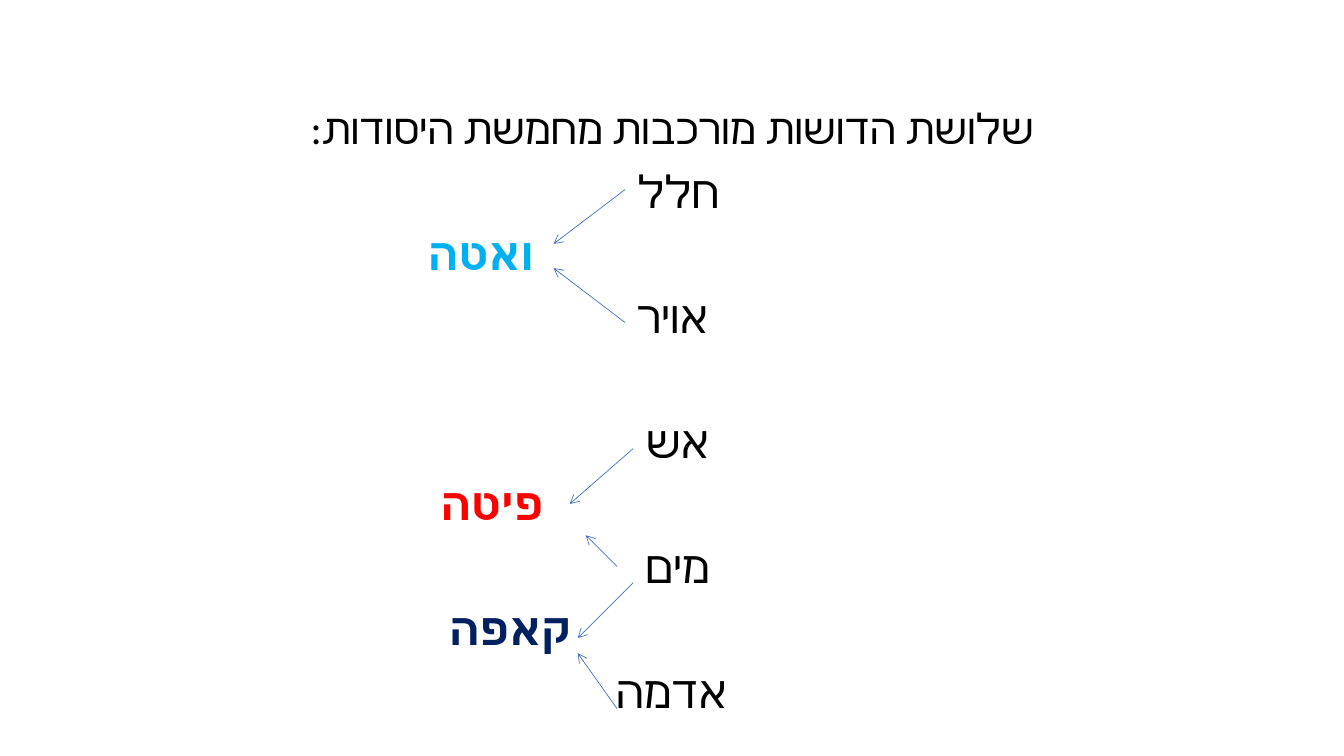
from lxml.etree import SubElement
from pptx import Presentation
from pptx.dml.color import RGBColor
from pptx.enum.shapes import MSO_CONNECTOR
from pptx.enum.text import MSO_ANCHOR, PP_ALIGN
from pptx.oxml.ns import qn
from pptx.util import Inches, Pt

COLORS = {
    "text": "000000",
    "vata": "00B0F0",
    "pitta": "FF0000",
    "kapha": "002060",
    "arrow": "4472C4",
}
FONT = "Calibri"
HEADING_CENTER_Y = 1.27
ROW_PITCH = 0.62
LABEL_WIDTH = 1.8
HEADING = "שלושת הדושות מורכבות מחמשת היסודות:"

# text, row below the heading, horizontal centre
ELEMENTS = [
    ("חלל", 1, 6.73),
    ("אויר", 3, 6.67),
    ("אש", 5, 6.72),
    ("מים", 7, 6.72),
    ("אדמה", 9, 6.66),
]
# text, row, horizontal centre, colour
DOSHAS = [
    ("ואטה", 2, 4.77, "vata"),
    ("פיטה", 6, 4.88, "pitta"),
    ("קאפה", 8, 5.06, "kapha"),
]
# element end, dosha end
ARROWS = [
    ((6.2, 1.88), (5.49, 2.42)),
    ((6.2, 3.2), (5.49, 2.66)),
    ((6.28, 4.45), (5.65, 5)),
    ((6.12, 5.62), (5.81, 5.31)),
    ((6.28, 5.78), (5.73, 6.33)),
    ((6.12, 7.03), (5.73, 6.48)),
]


def write_hebrew(shape, text, size, color="text", bold=False):
    """Fill the shape with one centred right-to-left line."""
    frame = shape.text_frame
    frame.word_wrap = True
    frame.vertical_anchor = MSO_ANCHOR.MIDDLE
    frame.margin_top = frame.margin_bottom = 0
    line = frame.paragraphs[0]
    line.text = text
    line.alignment = PP_ALIGN.CENTER
    line.font.size = Pt(size)
    line.font.bold = bold
    line.font.name = FONT
    line.font.color.rgb = RGBColor.from_string(COLORS[color])
    properties = line._p.get_or_add_pPr()
    properties.set("rtl", "1")
    SubElement(properties.find(qn("a:defRPr")), qn("a:cs"), typeface=FONT)


def set_heading(slide):
    heading = slide.shapes.title
    heading.left, heading.width = Inches(2.17), Inches(9)
    heading.top = Inches(HEADING_CENTER_Y - ROW_PITCH / 2)
    heading.height = Inches(ROW_PITCH)
    write_hebrew(heading, HEADING, 30)


def add_label(slide, text, row, center_x, color="text", bold=False):
    center_y = HEADING_CENTER_Y + row * ROW_PITCH
    label = slide.shapes.add_textbox(
        Inches(center_x - LABEL_WIDTH / 2), Inches(center_y - ROW_PITCH / 2),
        Inches(LABEL_WIDTH), Inches(ROW_PITCH))
    write_hebrew(label, text, 32, color, bold)


def add_arrow(slide, start, end):
    arrow = slide.shapes.add_connector(
        MSO_CONNECTOR.STRAIGHT, *map(Inches, start + end))
    arrow.line.width = Pt(0.5)
    arrow.line.color.rgb = RGBColor.from_string(COLORS["arrow"])
    SubElement(arrow.line._get_or_add_ln(), qn("a:tailEnd"), type="arrow")
    SubElement(arrow._element.spPr, qn("a:effectLst"))


def main():
    deck = Presentation()
    deck.slide_width, deck.slide_height = Inches(13.33), Inches(7.5)
    slide = deck.slides.add_slide(deck.slide_layouts.get_by_name("Title Only"))
    set_heading(slide)
    for text, row, center_x in ELEMENTS:
        add_label(slide, text, row, center_x)
    for text, row, center_x, color in DOSHAS:
        add_label(slide, text, row, center_x, color, bold=True)
    for start, end in ARROWS:
        add_arrow(slide, start, end)
    deck.save("out.pptx")


if __name__ == "__main__":
    main()
